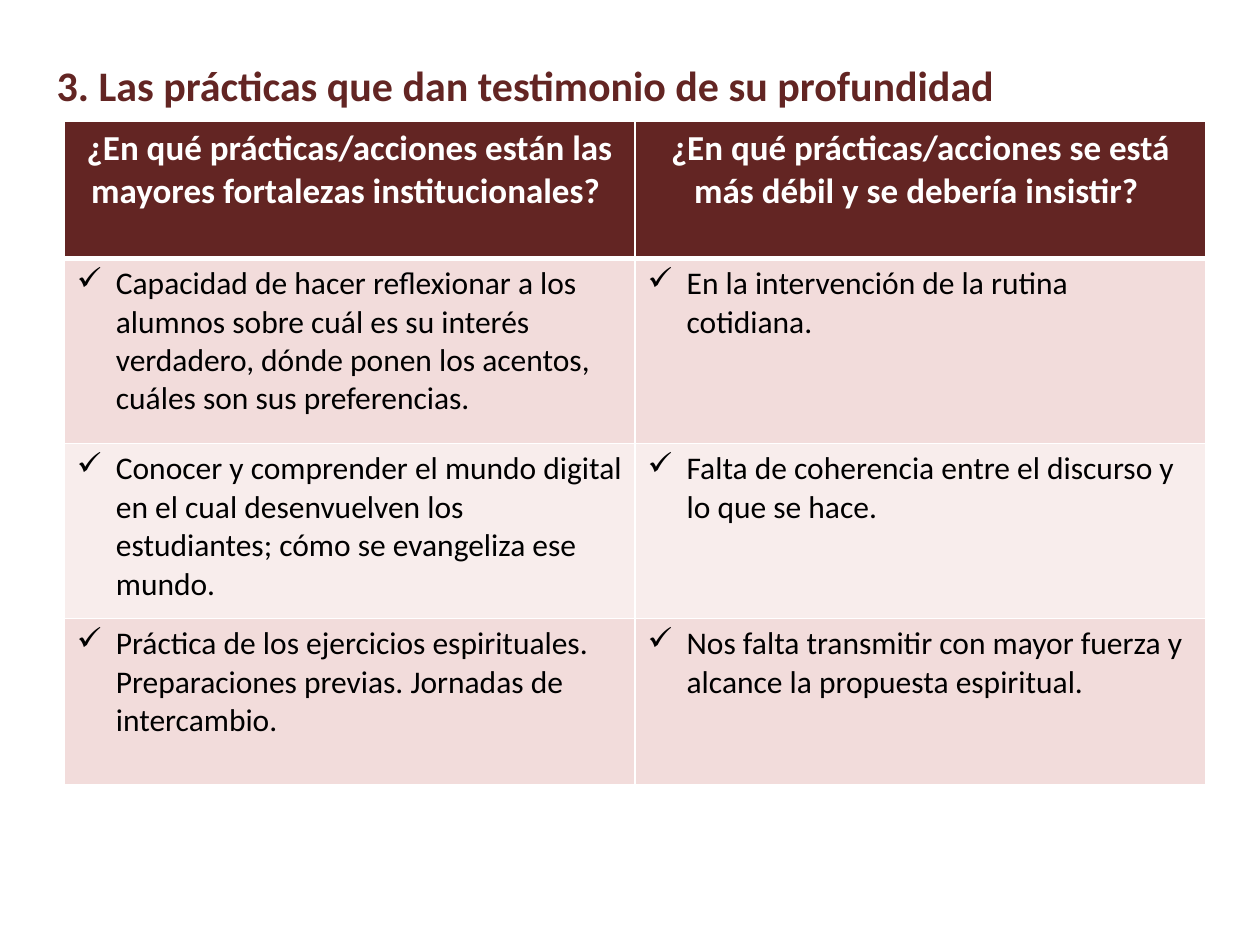
from lxml import etree
from pptx import Presentation
from pptx.dml.color import RGBColor
from pptx.enum import text
from pptx.oxml import ns
from pptx.util import Inches, Pt

MAROON, WHITE, BLACK = "632523", "FFFFFF", "000000"
ROSE, PALE_ROSE = "F2DCDB", "F8EDEC"


def style_span(span, size, color, bold):
    """Apply the slide's Calibri text format to a run."""
    for name, value in {"name": "Calibri", "size": Pt(size), "bold": bold}.items():
        setattr(span.font, name, value)
    span.font.color.rgb = RGBColor.from_string(color)


def add_borders(cell, bottom_width):
    """Draw white lines on all four sides of a table cell."""
    properties = cell._tc.get_or_add_tcPr()
    for side, width in {"L": 1, "R": 1, "T": 1, "B": bottom_width}.items():
        line = etree.SubElement(properties, ns.qn(f"a:ln{side}"), w=str(Pt(width)))
        fill = etree.SubElement(line, ns.qn("a:solidFill"))
        etree.SubElement(fill, ns.qn("a:srgbClr"), val=WHITE)


deck = Presentation()
deck.slide_width, deck.slide_height = Inches(10), Inches(7.5)
page = deck.slides.add_slide(deck.slide_layouts[5])

title = page.shapes.title
title_place = {"left": 0.35, "top": 0.36, "width": 9.52, "height": 0.63}
for name, value in title_place.items():
    setattr(title, name, Inches(value))
title.text_frame.vertical_anchor = text.MSO_ANCHOR.MIDDLE
para = title.text_frame.paragraphs[0]
para.alignment = text.PP_ALIGN.LEFT
span = para.add_run()
span.text = "3. Las prácticas que dan testimonio de su profundidad"
style_span(span, 24, MAROON, True)

practices = [
    ("¿En qué prácticas/acciones están las mayores fortalezas institucionales? ",
     "¿En qué prácticas/acciones se está más débil y se debería insistir? "),
    ("Capacidad de hacer reflexionar a los alumnos sobre cuál es su interés verdadero, "
     "dónde ponen los acentos, cuáles son sus preferencias.",
     "En la intervención de la rutina cotidiana."),
    ("Conocer y comprender el mundo digital en el cual desenvuelven los estudiantes; "
     "cómo se evangeliza ese mundo.",
     "Falta de coherencia entre el discurso y lo que se hace."),
    ("Práctica de los ejercicios espirituales. Preparaciones previas. "
     "Jornadas de intercambio.",
     "Nos falta transmitir con mayor fuerza y alcance la propuesta espiritual."),
]
row_heights = [1.09, 1.47, 1.39, 1.32]
row_fills = [MAROON, ROSE, PALE_ROSE, ROSE]

table = page.shapes.add_table(len(practices), 2, Inches(0.51), Inches(0.96),
                              Inches(9.06), Inches(sum(row_heights))).table
for column in table.columns:
    column.width = Inches(4.53)

for row, (wordings, height, color) in enumerate(zip(practices, row_heights, row_fills)):
    table.rows[row].height = Inches(height)
    is_header = row == 0
    for column, wording in enumerate(wordings):
        cell = table.cell(row, column)
        add_borders(cell, 3 if is_header else 1)
        cell.fill.solid()
        cell.fill.fore_color.rgb = RGBColor.from_string(color)
        para = cell.text_frame.paragraphs[0]
        span = para.add_run()
        span.text = wording
        if is_header:
            para.alignment = text.PP_ALIGN.CENTER
            style_span(span, 20, WHITE, True)
        else:
            style_span(span, 18, BLACK, False)
            bullet = para._p.get_or_add_pPr()
            bullet.set("marL", str(Inches(0.31)))
            bullet.set("indent", str(-Inches(0.31)))
            etree.SubElement(bullet, ns.qn("a:buChar"), char="✓")

deck.save("out.pptx")
